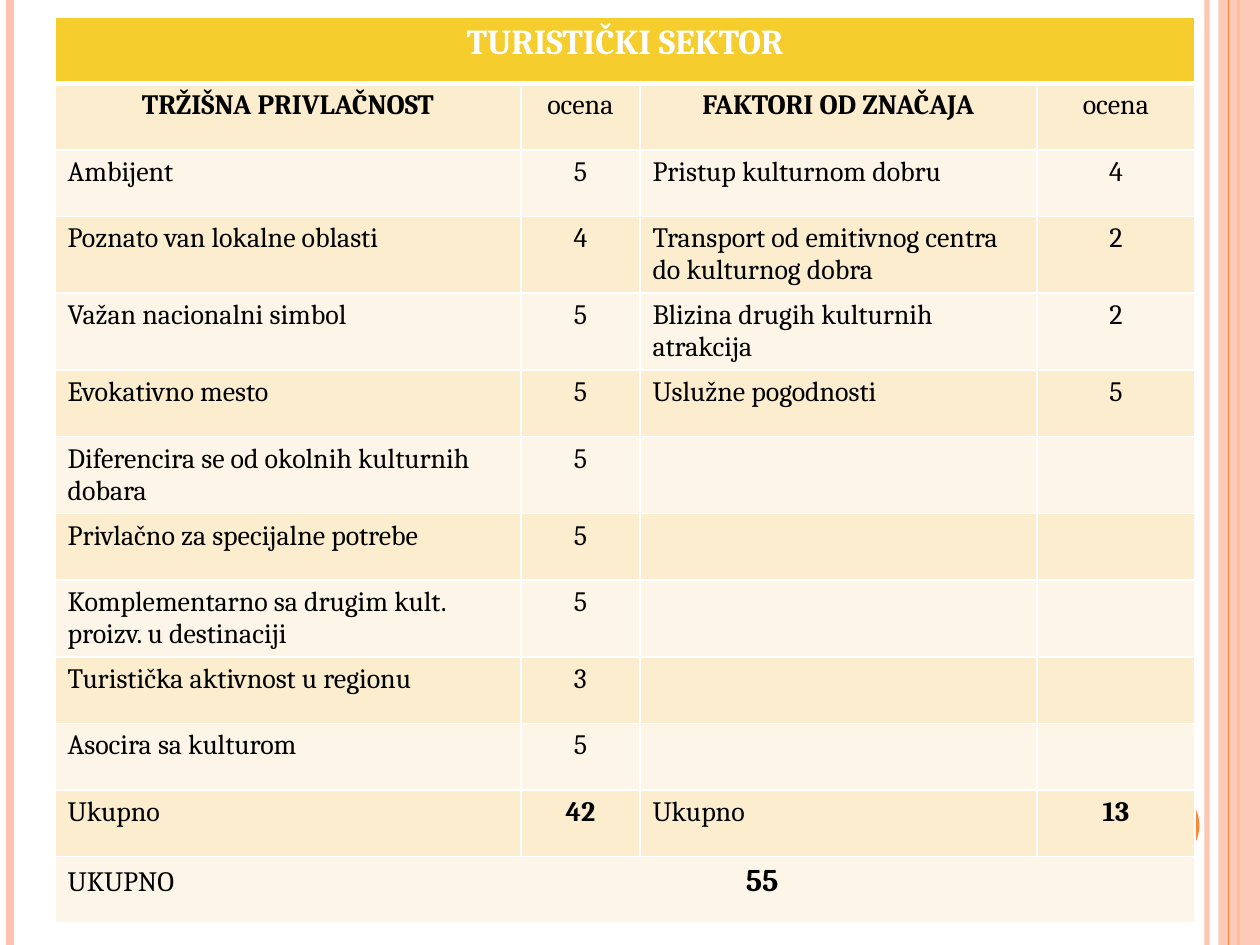
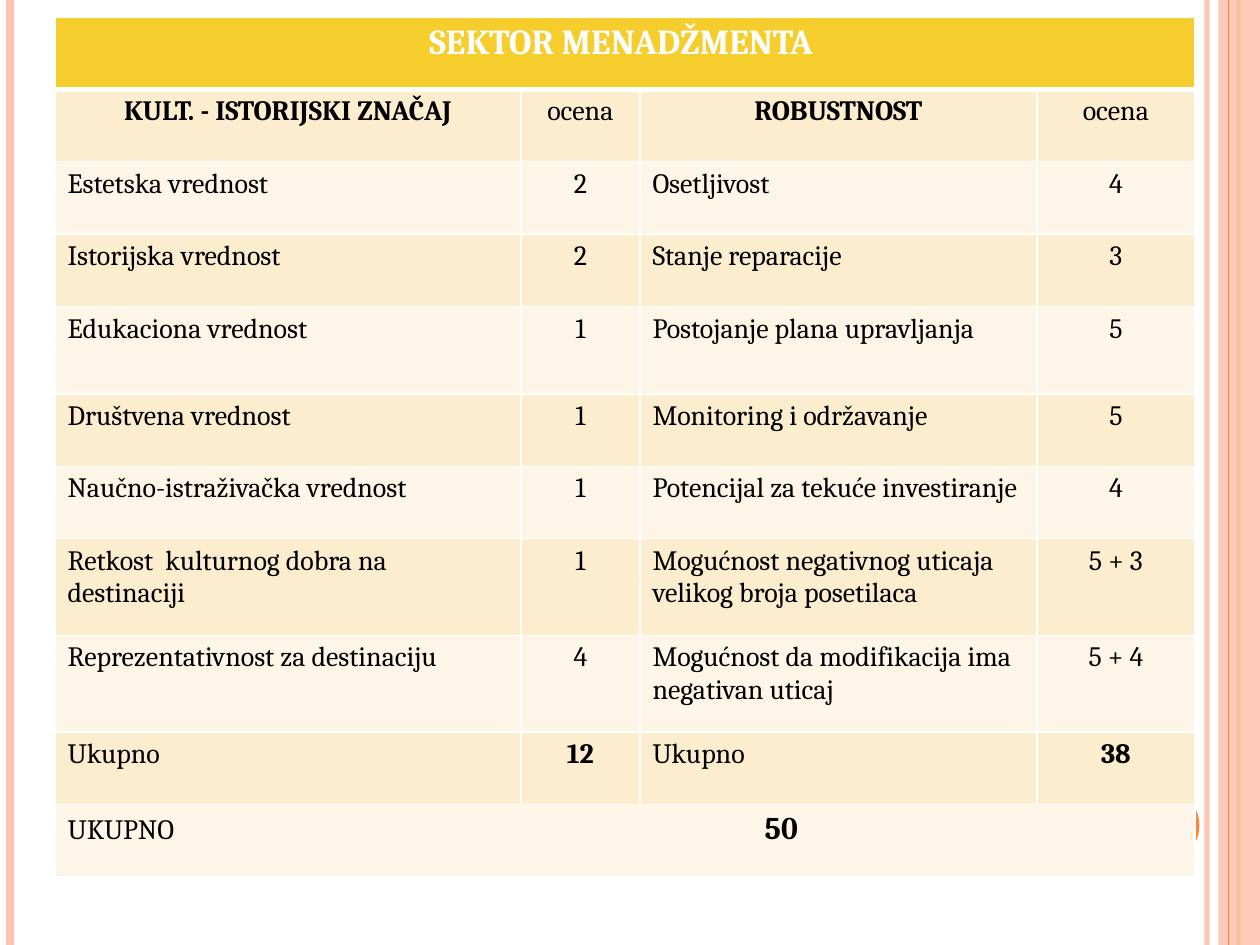
from lxml import etree
from pptx import Presentation
from pptx import util as u
from pptx.dml.color import RGBColor
from pptx.enum import shapes, text
from pptx.oxml.ns import qn

COLORS = {"peach": "FEC3AE", "orange": "FE8637", "gold": "F5CD2D",
          "band": "FBEDCD", "light": "FDF6E8", "white": "FFFFFF", "black": "000000"}
FONT = "Cambria"
WIDTH, HEIGHT = 25.4, 19.05
COLUMNS = (9.39, 2.4, 8, 3.19)

# Each row: left factor, its score, right factor, its score
TOURISM = [
    ("TRŽIŠNA PRIVLAČNOST", "ocena", "FAKTORI OD ZNAČAJA", "ocena"),
    ("Ambijent", "5", "Pristup kulturnom dobru", "4"),
    ("Poznato van lokalne oblasti", "4", "Transport od emitivnog centra do kulturnog dobra", "2"),
    ("Važan nacionalni simbol", "5", "Blizina drugih kulturnih atrakcija", "2"),
    ("Evokativno mesto", "5", "Uslužne pogodnosti", "5"),
    ("Diferencira se od okolnih kulturnih dobara", "5", "", ""),
    ("Privlačno za specijalne potrebe", "5", "", ""),
    ("Komplementarno sa drugim kult. proizv. u destinaciji", "5", "", ""),
    ("Turistička aktivnost u regionu", "3", "", ""),
    ("Asocira sa kulturom", "5", "", ""),
    ("Ukupno", "42", "Ukupno", "13"),
]
MANAGEMENT = [
    ("KULT. - ISTORIJSKI ZNAČAJ", "ocena", "ROBUSTNOST", "ocena"),
    ("Estetska vrednost", "2", "Osetljivost", "4"),
    ("Istorijska vrednost", "2", "Stanje reparacije", "3"),
    ("Edukaciona vrednost", "1", "Postojanje plana upravljanja", "5"),
    ("Društvena vrednost", "1", "Monitoring i održavanje", "5"),
    ("Naučno-istraživačka vrednost", "1", "Potencijal za tekuće investiranje", "4"),
    ("Retkost  kulturnog dobra na destinaciji", "1",
     "Mogućnost negativnog uticaja velikog broja posetilaca", "5 + 3"),
    ("Reprezentativnost za destinaciju", "4",
     "Mogućnost da modifikacija ima negativan uticaj", "5 + 4"),
    ("Ukupno", "12", "Ukupno", "38"),
]


def rgb(name):
    return RGBColor.from_string(COLORS[name])


def set_alpha(element, percent):
    color = element.find(".//" + qn("a:srgbClr"))
    etree.SubElement(color, qn("a:alpha"), val=str(percent * 1000))


class Deck:
    def __init__(self):
        self.prs = Presentation()
        self.prs.slide_width, self.prs.slide_height = u.Cm(WIDTH), u.Cm(HEIGHT)
        self.s = None

    def slide(self):
        self.s = self.prs.slides.add_slide(self.prs.slide_layouts[6])
        self.decoration()

    def stripe(self, x, color, weight, alpha=None):
        line = self.s.shapes.add_connector(
            shapes.MSO_CONNECTOR.STRAIGHT, u.Cm(x), 0, u.Cm(x), u.Cm(HEIGHT))
        line.line.color.rgb = rgb(color)
        line.line.width = u.Pt(weight)
        sp_pr = line._element.spPr
        if alpha:
            set_alpha(sp_pr, alpha)
        etree.SubElement(sp_pr, qn("a:effectLst"))

    def shape(self, kind, left, top, width, height, color, alpha=None):
        sp = self.s.shapes.add_shape(kind, *map(u.Cm, (left, top, width, height)))
        sp.shadow.inherit = False
        sp.fill.solid()
        sp.fill.fore_color.rgb = rgb(color)
        sp.line.fill.background()
        if alpha:
            set_alpha(sp._element.spPr, alpha)

    def decoration(self):
        self.stripe(24.33, "peach", 3, 93)
        self.stripe(0.2, "peach", 4.5)
        self.stripe(24.97, "orange", 1.5)
        self.shape(shapes.MSO_SHAPE.RECTANGLE, 24.56, 0, 0.84, HEIGHT, "peach", 87)
        self.stripe(24.77, "orange", 0.75)
        self.shape(shapes.MSO_SHAPE.OVAL, 22.66, 15.88, 1.52, 1.52, "orange")

    def run(self, p, words, size=16, bold=False, color="black"):
        r = p.add_run()
        r.text = words
        r.font.name, r.font.size, r.font.bold = FONT, u.Pt(size), bold
        r.font.color.rgb = rgb(color)

    def cell(self, cell, fill, top=1, bottom=1):
        tc_pr = cell._tc.get_or_add_tcPr()
        for side, weight in (("L", 1), ("R", 1), ("T", top), ("B", bottom)):
            ln = etree.SubElement(tc_pr, qn("a:ln" + side), w=str(u.Pt(weight)))
            solid = etree.SubElement(ln, qn("a:solidFill"))
            etree.SubElement(solid, qn("a:srgbClr"), val=COLORS["white"])
        cell.fill.solid()
        cell.fill.fore_color.rgb = rgb(fill)

    def tab_stop(self, p, position):
        tabs = etree.SubElement(p._p.get_or_add_pPr(), qn("a:tabLst"))
        etree.SubElement(tabs, qn("a:tab"), pos=str(u.Cm(position)), algn="l")

    def score_table(self, title, rows, total, total_at, heights):
        frame = self.s.shapes.add_table(
            len(heights), len(COLUMNS), u.Cm(1.11), u.Cm(0.34),
            u.Cm(sum(COLUMNS)), u.Cm(sum(heights)))
        table = frame.table
        table.first_row = table.horz_banding = False
        for column, width in zip(table.columns, COLUMNS):
            column.width = u.Cm(width)

        # Row heights, fills and borders
        for i, height in enumerate(heights):
            table.rows[i].height = u.Cm(height)
            fill = "gold" if i == 0 else "band" if i % 2 else "light"
            for cell in table.rows[i].cells:
                self.cell(cell, fill, top=3 if i == 1 else 1, bottom=3 if i == 0 else 1)

        # Title row
        last = len(heights) - 1
        for i in (0, last):
            table.cell(i, 0).merge(table.cell(i, len(COLUMNS) - 1))
        p = table.cell(0, 0).text_frame.paragraphs[0]
        p.alignment = text.PP_ALIGN.CENTER
        self.run(p, title, 20, True, "white")

        # Factors and scores; headings and subtotals are bold
        for i, row in enumerate(rows, 1):
            for j, words in enumerate(row):
                if not words:
                    continue
                is_score = j % 2 == 1
                p = table.cell(i, j).text_frame.paragraphs[0]
                if i == 1 or is_score:
                    p.alignment = text.PP_ALIGN.CENTER
                bold = (i == 1 and not is_score) or (i == len(rows) and is_score)
                self.run(p, words, bold=bold)

        # Grand total
        p = table.cell(last, 0).text_frame.paragraphs[0]
        self.tab_stop(p, total_at)
        self.run(p, "UKUPNO\t")
        self.run(p, total, 18, True)


def main():
    deck = Deck()

    # Tourism sector
    deck.slide()
    deck.score_table("TURISTIČKI SEKTOR", TOURISM, "55", 13.67, [1.34] * 13)

    # Management sector
    deck.slide()
    heights = [1.46] * 4 + [1.76] + [1.46] * 2 + [1.95] * 2 + [1.46] * 2
    deck.score_table("SEKTOR MENADŽMENTA ", MANAGEMENT, "50", 14.05, heights)

    deck.prs.save("out.pptx")


if __name__ == "__main__":
    main()
